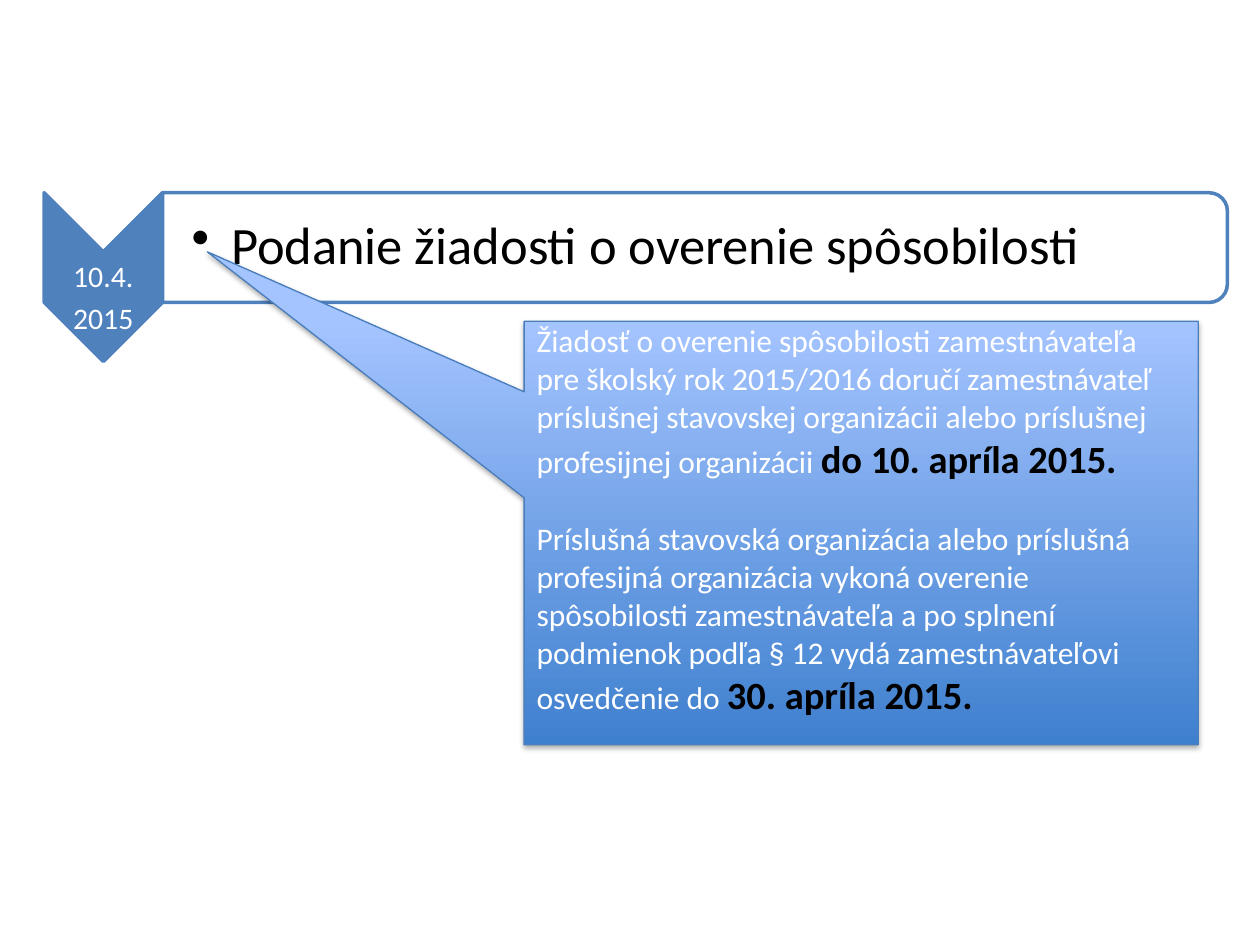
import dataclasses

import lxml.etree
import pptx
import pptx.dml.color
import pptx.enum.shapes
import pptx.enum.text
import pptx.oxml
import pptx.oxml.ns
import pptx.util

Pt = pptx.util.Pt
Shapes = pptx.enum.shapes.MSO_SHAPE
Align = pptx.enum.text.PP_ALIGN
qn = pptx.oxml.ns.qn


@dataclasses.dataclass(frozen=True)
class Theme:
    """Fonts, type sizes and colours of the slide."""
    font: str = "Calibri"
    heading_size: float = 30
    deadline_size: float = 22
    body_size: float = 18
    date_size: float = 17
    accent: str = "4F81BD"
    callout_line: str = "4B7EBC"
    callout_bottom: str = "3F80CE"
    callout_top: str = "A4C4FF"
    light: str = "FFFFFF"
    dark: str = "000000"


THEME = Theme()


def rgb(value):
    """Turn a hex string into a colour."""
    return pptx.dml.color.RGBColor.from_string(value)


def add_text(paragraph, text, *, size, color, bold=False):
    """Append a formatted run to a paragraph."""
    run = paragraph.add_run()
    run.text = text
    run.font.name = THEME.font
    run.font.size = Pt(size)
    run.font.bold = bold
    run.font.color.rgb = rgb(color)


def prepare_frame(shape, left, top, right, bottom):
    """Set wrapping, middle anchor and insets, and return the text frame."""
    frame = shape.text_frame
    frame.word_wrap = True
    frame.vertical_anchor = pptx.enum.text.MSO_ANCHOR.MIDDLE
    frame.margin_left, frame.margin_top = Pt(left), Pt(top)
    frame.margin_right, frame.margin_bottom = Pt(right), Pt(bottom)
    return frame


def add_outlined(slide, kind, box, *, line, width, rotation=0):
    """Add a preset shape without shadow and with a coloured outline."""
    shape = slide.shapes.add_shape(kind, *map(Pt, box))
    shape.shadow.inherit = False
    shape.rotation = rotation
    shape.line.color.rgb = rgb(line)
    shape.line.width = Pt(width)
    return shape


def add_solid(slide, kind, box, fill):
    """Add a quarter-turned solid shape of the timeline row."""
    shape = add_outlined(slide, kind, box, line=THEME.accent, width=2, rotation=90)
    shape.fill.solid()
    shape.fill.fore_color.rgb = rgb(fill)


def add_date(slide, box, lines):
    """Write the date lines over the chevron."""
    frame = prepare_frame(slide.shapes.add_textbox(*map(Pt, box)), 0.7, 0.7, 0.7, 0.7)
    for index, text in enumerate(lines):
        paragraph = frame.add_paragraph() if index else frame.paragraphs[0]
        paragraph.alignment = Align.CENTER
        paragraph.line_spacing = 0.9
        paragraph.space_before = Pt(6 if index else 0)
        add_text(paragraph, text, size=THEME.date_size, color=THEME.light)


def add_heading(slide, box, text):
    """Write the bulleted heading of the timeline row."""
    frame = prepare_frame(slide.shapes.add_textbox(*map(Pt, box)), 16.5, 1.5, 1.5, 1.5)
    paragraph = frame.paragraphs[0]
    paragraph.line_spacing = 0.9
    properties = paragraph._p.get_or_add_pPr()
    properties.set("marL", str(Pt(22.5)))
    properties.set("indent", str(-Pt(22.5)))
    lxml.etree.SubElement(properties, qn("a:buChar"), char="•")
    add_text(paragraph, text, size=THEME.heading_size, color=THEME.dark)


def add_drop_shadow(shape):
    """Put a soft shadow below a shape."""
    effects = shape._element.spPr.find(qn("a:effectLst"))
    shadow = lxml.etree.SubElement(
        effects, qn("a:outerShdw"), blurRad=str(Pt(3.1)), dist=str(Pt(1.8)),
        dir="5400000", rotWithShape="0")
    color = lxml.etree.SubElement(shadow, qn("a:srgbClr"), val=THEME.dark)
    lxml.etree.SubElement(color, qn("a:alpha"), val="35000")


def add_callout(slide, box, pointer, notes):
    """Add the gradient callout with notes that end in a bold deadline."""
    callout = add_outlined(slide, Shapes.RECTANGULAR_CALLOUT, box,
                           line=THEME.callout_line, width=0.75)
    for index, offset in enumerate(pointer):
        callout.adjustments[index] = offset
    callout.fill.gradient()
    callout.fill.gradient_angle = 90
    for stop, color in zip(callout.fill.gradient_stops,
                           (THEME.callout_bottom, THEME.callout_top)):
        stop.color.rgb = rgb(color)
    add_drop_shadow(callout)
    frame = prepare_frame(callout, 7.2, 0, 7.2, 16)
    for index, (note, deadline) in enumerate(notes):
        paragraph = frame.add_paragraph() if index else frame.paragraphs[0]
        paragraph.alignment = Align.LEFT
        paragraph.space_before = Pt(22 if index else 0)
        add_text(paragraph, note, size=THEME.body_size, color=THEME.light)
        add_text(paragraph, deadline, size=THEME.deadline_size,
                 color=THEME.dark, bold=True)


def main():
    """Build and save the slide."""
    deck = pptx.Presentation()
    deck.slide_width, deck.slide_height = Pt(720), Pt(540)
    slide = deck.slides.add_slide(deck.slide_layouts[6])
    add_solid(slide, Shapes.CHEVRON, (10.8, 124.5, 96.5, 67.7), THEME.accent)
    add_date(slide, (25, 156.3, 68, 29), ("10.4.", "2015"))
    add_solid(slide, Shapes.ROUND_2_SAME_RECTANGLE, (365.8, -162.7, 62.7, 608.4),
              THEME.light)
    add_heading(slide, (93, 113, 605.5, 57), "Podanie žiadosti o overenie spôsobilosti")
    add_callout(slide, (299.5, 183.6, 385.2, 242), (-0.97, -0.664), (
        ("Žiadosť o overenie spôsobilosti zamestnávateľa pre školský rok 2015/2016 "
         "doručí zamestnávateľ príslušnej stavovskej organizácii alebo príslušnej "
         "profesijnej organizácii ", "do 10. apríla 2015."),
        ("Príslušná stavovská organizácia alebo príslušná profesijná organizácia "
         "vykoná overenie spôsobilosti zamestnávateľa a po splnení podmienok podľa "
         "§ 12 vydá zamestnávateľovi osvedčenie do ", "30. apríla 2015."),
    ))
    deck.save("out.pptx")


if __name__ == "__main__":
    main()
